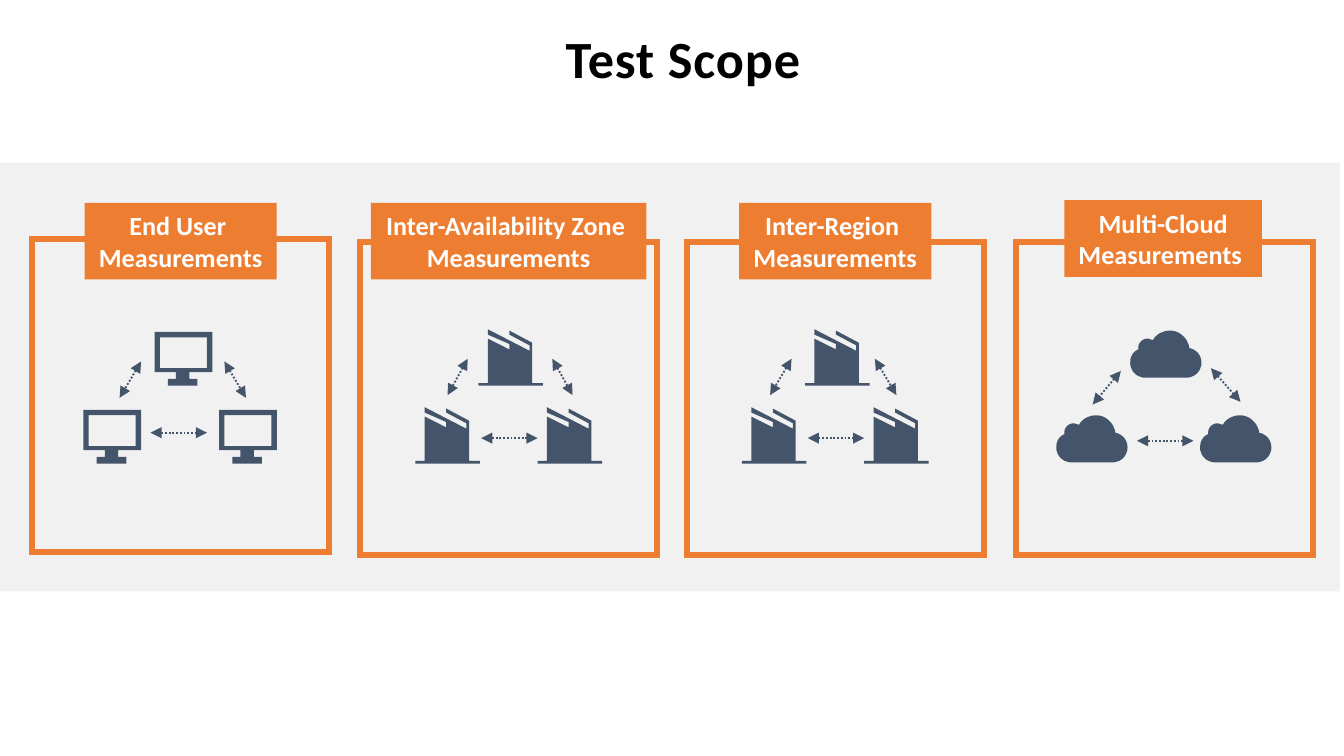
import pptx
import pptx.util
import pptx.dml.color
import pptx.enum.shapes
import pptx.enum.text
import pptx.oxml
import pptx.oxml.ns
import lxml.etree

Inches = pptx.util.Inches
Pt = pptx.util.Pt
RGBColor = pptx.dml.color.RGBColor
RECT = pptx.enum.shapes.MSO_SHAPE.RECTANGLE
CENTER = pptx.enum.text.PP_ALIGN.CENTER
MIDDLE = pptx.enum.text.MSO_ANCHOR.MIDDLE
qn = pptx.oxml.ns.qn

BLACK = RGBColor(0x00, 0x00, 0x00)
WHITE = RGBColor(0xFF, 0xFF, 0xFF)
GRAY = RGBColor(0xA5, 0xA5, 0xA5)
ORANGE = RGBColor(0xED, 0x7D, 0x31)
SLATE = RGBColor(0x44, 0x54, 0x6A)

# A 16:9 slide
deck = pptx.Presentation()
deck.slide_width, deck.slide_height = Inches(10), Inches(10 * 9 / 16)
slide = deck.slides.add_slide(deck.slide_layouts[6])
shapes = slide.shapes


def add_rect(x, y, w, h):
    rect = shapes.add_shape(RECT, Inches(x), Inches(y), Inches(w), Inches(h))
    rect.shadow.inherit = False
    return rect


def add_run(para, text, size, color):
    run = para.add_run()
    run.text = text
    run.font.name = "Calibri"
    run.font.size = Pt(size)
    run.font.bold = True
    run.font.color.rgb = color
    return run


# Icon outlines in inches, each a list of closed loops
screen = [
    [(0, 0.3), (0.16, 0.3), (0.16, 0.35), (0.1, 0.35), (0.1, 0.4), (0.32, 0.4),
     (0.32, 0.35), (0.26, 0.35), (0.26, 0.3), (0.43, 0.3), (0.43, 0), (0, 0)],
    [(0.04, 0.04), (0.39, 0.04), (0.39, 0.27), (0.04, 0.27)],
]
tower = [
    [(0.4, 0.4), (0.4, 0.1), (0.23, 0.01), (0.23, 0.04), (0.38, 0.12),
     (0.38, 0.16), (0.07, 0), (0.07, 0.04), (0.23, 0.11), (0.23, 0.15),
     (0.07, 0.07), (0.07, 0.4), (0, 0.4), (0, 0.42), (0.48, 0.42), (0.48, 0.4)],
]

# The cloud is made of Bezier curves, cut into short steps
curves = [
    (0.43, 0.06, 0.37, 0, 0.3, 0), (0.24, 0, 0.19, 0.03, 0.17, 0.07),
    (0.16, 0.07, 0.14, 0.06, 0.13, 0.06), (0.09, 0.06, 0.06, 0.09, 0.06, 0.13),
    (0.06, 0.13, 0.06, 0.14, 0.06, 0.14), (0.02, 0.16, 0, 0.19, 0, 0.24),
    (0, 0.3, 0.05, 0.35, 0.11, 0.35), (0.11, 0.35, 0.42, 0.35, 0.42, 0.35),
    (0.48, 0.35, 0.53, 0.3, 0.53, 0.24), (0.53, 0.18, 0.49, 0.14, 0.44, 0.13),
]
STEPS = 10
edge = [(0.44, 0.13)]
for ax, ay, bx, by, cx, cy in curves:
    px, py = edge[-1]
    for step in range(1, STEPS + 1):
        t = step / STEPS
        u = 1 - t
        edge.append((u**3 * px + 3 * u * u * t * ax + 3 * u * t * t * bx + t**3 * cx,
                     u**3 * py + 3 * u * u * t * ay + 3 * u * t * t * by + t**3 * cy))
cloud = [edge]

# Band behind the panels
band = add_rect(-0.03, 1.21, 10, 3.19)
band.fill.solid()
band.fill.fore_color.rgb = GRAY
band.line.fill.background()
tint = band.fill._xPr.find(qn("a:solidFill"))[0]
lxml.etree.SubElement(tint, qn("a:alpha")).set("val", "15000")

# Title
title = shapes.add_textbox(Inches(0.26), Inches(0.15), Inches(9.74), Inches(0.63))
frame = title.text_frame
frame.word_wrap = True
frame.margin_top = Inches(0.05)
para = frame.paragraphs[0]
para.alignment = CENTER
para.space_before = Pt(7.5)
run = add_run(para, "Test Scope ", 28, BLACK)
run.font._element.set("spc", "50")

# Panels: frame corner, label box, label lines, icon, icon corners, arrows
panels = [
    ((0.24, 1.78), (0.63, 1.51, 1.43), ("End User ", "Measurements"), screen,
     [(0.62, 3.05), (1.63, 3.05), (1.15, 2.47)],
     [(1.54, 3.22, 1.12, 3.22), (1.05, 2.69, 0.89, 2.96), (1.67, 2.69, 1.83, 2.96)]),
    ((2.68, 1.8), (2.76, 1.51, 2.05), ("Inter-Availability Zone ", "Measurements"), tower,
     [(3.09, 3.03), (4, 3.03), (3.56, 2.45)],
     [(4, 3.26, 3.58, 3.26), (3.48, 2.67, 3.33, 2.94), (4.11, 2.67, 4.26, 2.94)]),
    ((5.11, 1.8), (5.5, 1.51, 1.43), ("Inter-Region ", "Measurements"), tower,
     [(5.52, 3.03), (6.43, 3.03), (5.99, 2.45)],
     [(6.43, 3.26, 6.01, 3.26), (5.89, 2.67, 5.73, 2.94), (6.51, 2.67, 6.67, 2.94)]),
    ((7.56, 1.8), (7.92, 1.49, 1.47), ("Multi-Cloud", "Measurements "), cloud,
     [(7.86, 3.09), (8.93, 3.09), (8.41, 2.46)],
     [(8.88, 3.28, 8.46, 3.28), (8.34, 2.76, 8.13, 3.01), (9.01, 2.74, 9.23, 2.99)]),
]

for corner, (left, top, width), lines, icon, spots, arrows in panels:
    # Icons, drawn in thousandths of an inch
    for x, y in spots:
        pen = None
        for loop in icon:
            dots = [(px * 1000, py * 1000) for px, py in loop]
            if pen is None:
                pen = shapes.build_freeform(*dots[0], scale=Inches(1) / 1000)
            else:
                pen.move_to(*dots[0])
            pen.add_line_segments(dots[1:], close=True)
        shape = pen.convert_to_shape(Inches(x), Inches(y))
        shape.shadow.inherit = False
        shape.fill.solid()
        shape.fill.fore_color.rgb = SLATE
        shape.line.fill.background()

    # Dotted arrows with a head at both ends
    for ends in arrows:
        link = shapes.add_connector(pptx.enum.shapes.MSO_CONNECTOR.STRAIGHT,
                                    *[Inches(end) for end in ends])
        link.line.color.rgb = SLATE
        link.line.width = Pt(1)
        stroke = link.line._get_or_add_ln()
        for tag, val in (("prstDash", "sysDot"), ("headEnd", "triangle"), ("tailEnd", "triangle")):
            part = lxml.etree.SubElement(stroke, qn("a:" + tag))
            part.set("val" if tag == "prstDash" else "type", val)
        lxml.etree.SubElement(link._element.spPr, qn("a:effectLst"))

    # Frame with sharp corners
    box = add_rect(*corner, 2.21, 2.33)
    box.fill.background()
    box.line.color.rgb = ORANGE
    box.line.width = Pt(3)
    miter = lxml.etree.SubElement(box.line._get_or_add_ln(), qn("a:miter"))
    miter.set("lim", "800000")

    # Label
    label = add_rect(left, top, width, 0.57)
    label.fill.solid()
    label.fill.fore_color.rgb = ORANGE
    label.line.fill.background()
    frame = label.text_frame
    frame.word_wrap = False
    frame.auto_size = pptx.enum.text.MSO_AUTO_SIZE.SHAPE_TO_FIT_TEXT
    frame.vertical_anchor = MIDDLE
    for i, line in enumerate(lines):
        para = frame.add_paragraph() if i else frame.paragraphs[0]
        para.alignment = CENTER
        add_run(para, line, 14, WHITE)

deck.save("out.pptx")
